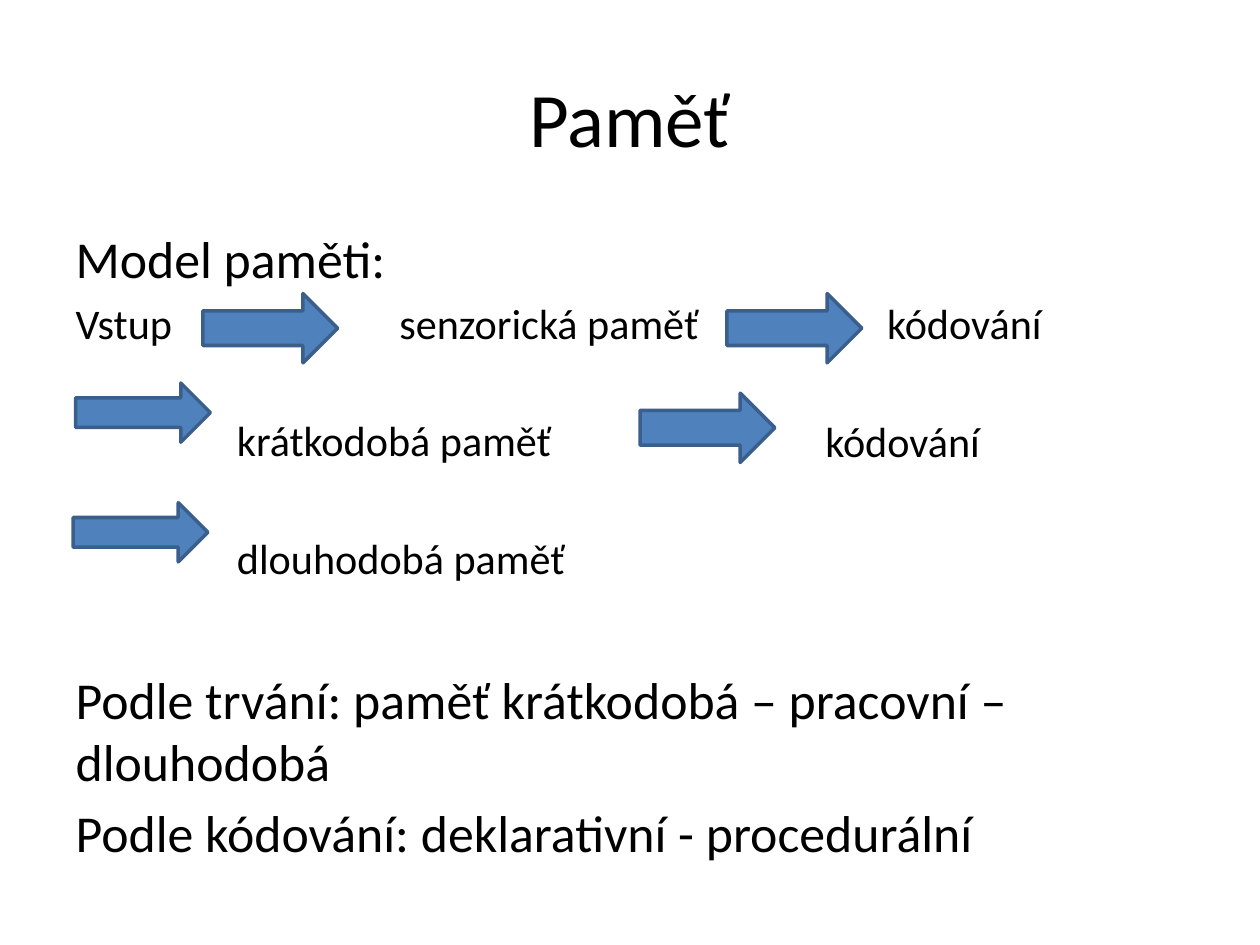
from lxml.etree import SubElement
from pptx import Presentation
from pptx.dml.color import RGBColor
from pptx.enum.shapes import MSO_SHAPE
from pptx.enum.text import MSO_ANCHOR, MSO_AUTO_SIZE, PP_ALIGN
from pptx.oxml.ns import qn
from pptx.util import Inches, Pt

# Content
TITLE = "Paměť"
LARGE, SMALL = 29.6, 24.1
# text, size, space before in points, left indent in inches
LINES = [
    ("Model paměti:", LARGE, 0, 0),
    ("Vstup", SMALL, 4.5, 0),
    ("krátkodobá paměť", SMALL, 38.5, 1.28),
    ("dlouhodobá paměť", SMALL, 38.5, 1.28),
    ("Podle trvání: paměť krátkodobá – pracovní – dlouhodobá", LARGE, 48, 0),
    ("Podle kódování: deklarativní - procedurální", LARGE, 5, 0),
]
# Later stages on the same rows: text, left, top, width in inches
STAGES = [
    ("senzorická paměť", 3.17, 2.36, 2.5),
    ("kódování", 7.04, 2.36, 1.5),
    ("kódování", 6.55, 3.3, 1.5),
]
STAGE_HEIGHT = 0.41
# left, top, height in inches
ARROWS = [
    (1.61, 2.33, 0.55),
    (5.77, 2.33, 0.55),
    (0.6, 3.04, 0.47),
    (5.08, 3.12, 0.55),
    (0.58, 3.99, 0.47),
]
ARROW_WIDTH = 1.07


def color(value):
    return RGBColor.from_string(value)


def place(shape, left, top, width, height):
    shape.left, shape.top = Inches(left), Inches(top)
    shape.width, shape.height = Inches(width), Inches(height)


def write(paragraph, text, size, align=PP_ALIGN.LEFT, before=0, indent=0):
    paragraph.alignment = align
    paragraph.space_before = Pt(before)
    properties = paragraph._p.get_or_add_pPr()
    properties.set("marL", str(Inches(indent)))
    properties.set("indent", "0")
    SubElement(properties, qn("a:buNone"))
    run = paragraph.add_run()
    run.text = text
    run.font.size = Pt(size)
    run.font.name = "Calibri"
    run.font.color.rgb = color("000000")


presentation = Presentation()
presentation.slide_width, presentation.slide_height = Inches(10), Inches(7.5)
slide = presentation.slides.add_slide(presentation.slide_layouts[1])

# Title
title = slide.shapes.title
place(title, 0.5, 0.3, 9, 1.25)
title.text_frame.vertical_anchor = MSO_ANCHOR.MIDDLE
write(title.text_frame.paragraphs[0], TITLE, 44, align=PP_ALIGN.CENTER)

# Body text
body = slide.placeholders[1]
place(body, 0.5, 1.75, 9, 4.95)
frame = body.text_frame
frame.auto_size = MSO_AUTO_SIZE.NONE
for index, (text, size, before, indent) in enumerate(LINES):
    paragraph = frame.add_paragraph() if index else frame.paragraphs[0]
    write(paragraph, text, size, before=before, indent=indent)

# Stages to the right of the arrows
for text, left, top, width in STAGES:
    box = slide.shapes.add_textbox(
        Inches(left), Inches(top), Inches(width), Inches(STAGE_HEIGHT)
    )
    frame = box.text_frame
    frame.word_wrap = True
    frame.margin_left = frame.margin_right = frame.margin_top = frame.margin_bottom = 0
    write(frame.paragraphs[0], text, SMALL)

# Arrows between the stages
for left, top, height in ARROWS:
    arrow = slide.shapes.add_shape(
        MSO_SHAPE.RIGHT_ARROW, Inches(left), Inches(top), Inches(ARROW_WIDTH), Inches(height)
    )
    arrow.shadow.inherit = False
    arrow.fill.solid()
    arrow.fill.fore_color.rgb = color("4F81BD")
    arrow.line.color.rgb = color("3A5F8C")
    arrow.line.width = Pt(2)

presentation.save("out.pptx")
